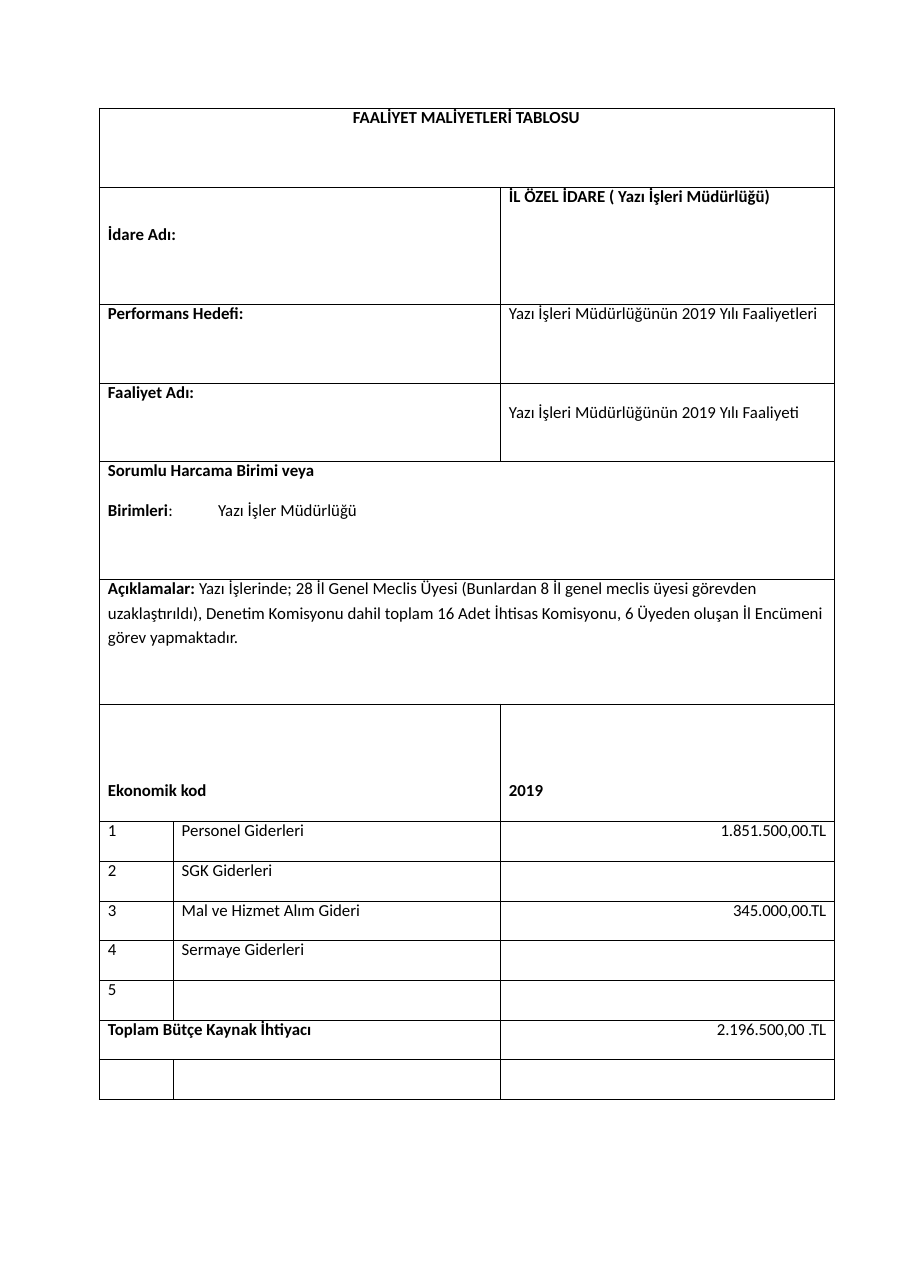
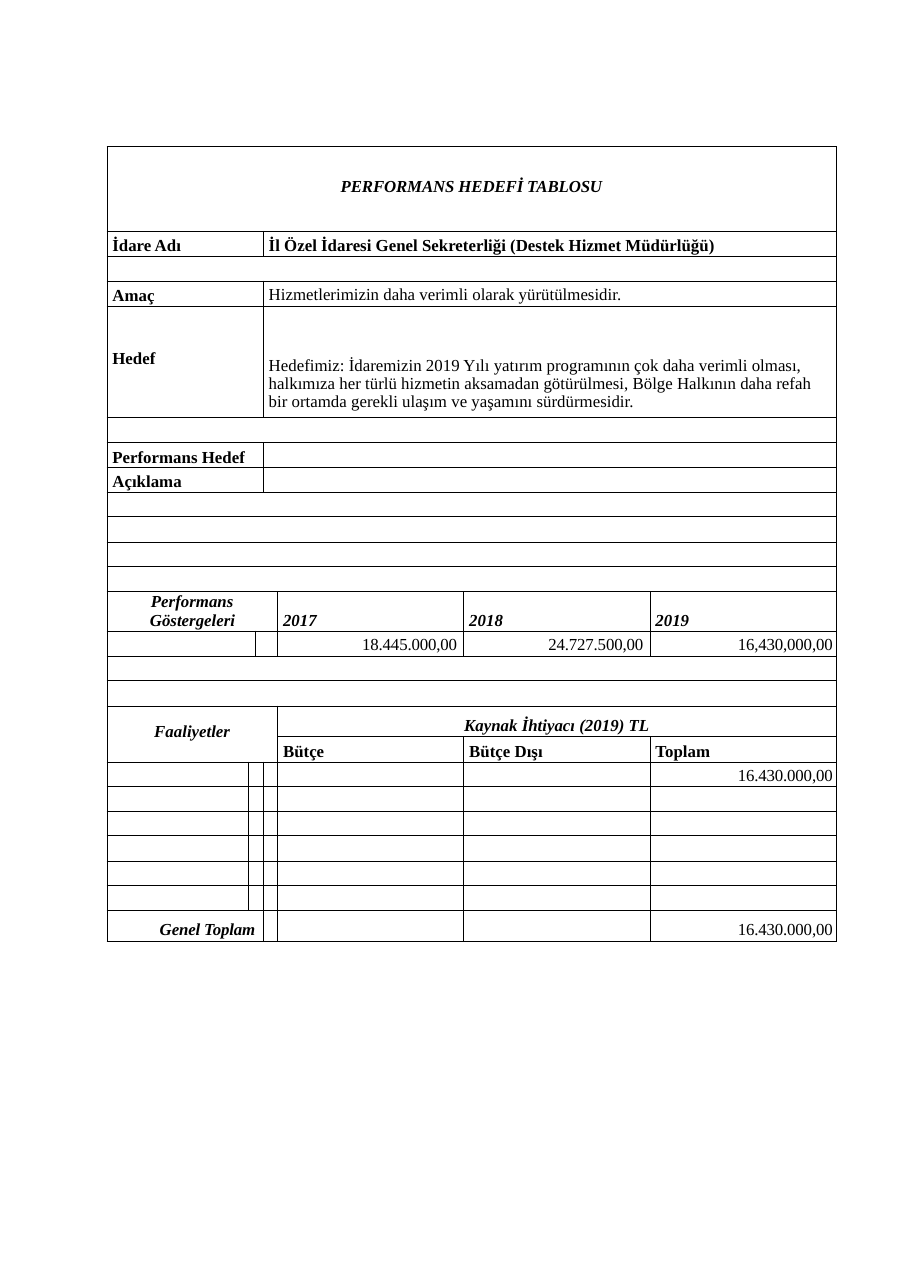
from lxml import etree
from pptx import Presentation
from pptx.dml.color import RGBColor
from pptx.enum.text import PP_ALIGN
from pptx.oxml.ns import qn
from pptx.util import Inches, Pt

LEFT, CENTER, RIGHT = PP_ALIGN.LEFT, PP_ALIGN.CENTER, PP_ALIGN.RIGHT
COLORS = {"ink": "000000"}
TEXT_SIZE = 11
EMPTY_SIZE = 8
BORDER = Pt(0.5)
TIGHT = "-10"


def para(*runs, pitch=None, before=0, tab=None):
    return {"runs": runs, "pitch": pitch, "before": before, "tab": tab}


def entry(row, col, *paras, left=0.0, top=0.0, right=0.0, align=LEFT, first=0.0):
    return {"row": row, "col": col, "paras": paras, "left": left, "top": top,
            "right": right, "align": align, "first": first}


def cost_cell(row, col, text, style="", top=0.0, pitch=12.9):
    return entry(row, col, para((text, style), pitch=pitch), left=0.08, top=top)


def target_cell(row, col, text, style="b", top=0.04, left=0.05):
    return entry(row, col, para((text, style), pitch=12.8), left=left, top=top)


EXPENSES = [
    ("1", "Personel Giderleri", "1.851.500,00.TL"),
    ("2", "SGK Giderleri", ""),
    ("3", "Mal ve Hizmet Alım Gideri", "345.000,00.TL"),
    ("4", "Sermaye Giderleri", ""),
    ("5", "", ""),
]
FIRST_EXPENSE = 7

cost_entries = [
    entry(0, 0, para(("FAALİYET MALİYETLERİ TABLOSU", "b"), pitch=13), align=CENTER),
    cost_cell(1, 0, "İdare Adı:", "b", top=0.34, pitch=None),
    cost_cell(1, 2, "İL ÖZEL İDARE ( Yazı İşleri Müdürlüğü)", "b"),
    cost_cell(2, 0, "Performans Hedefi:", "b"),
    cost_cell(2, 2, "Yazı İşleri Müdürlüğünün 2019 Yılı Faaliyetleri"),
    cost_cell(3, 0, "Faaliyet Adı:", "b"),
    cost_cell(3, 2, "Yazı İşleri Müdürlüğünün 2019 Yılı Faaliyeti", top=0.17, pitch=None),
    entry(4, 0,
          para(("Sorumlu Harcama Birimi veya", "b"), pitch=12.9),
          para(("Birimleri", "b"), (":\tYazı İşler Müdürlüğü", ""), before=12.2, tab=4.05),
          left=0.08),
    entry(5, 0,
          para(("Açıklamalar: ", "b"),
               ("Yazı İşlerinde; 28 İl Genel Meclis Üyesi "
                "(Bunlardan 8 İl genel meclis üyesi görevden", ""), pitch=13),
          para(("uzaklaştırıldı), Denetim Komisyonu dahil toplam 16 Adet İhtisas Komisyonu, "
                "6 Üyeden oluşan İl Encümeni görev yapmaktadır.", ""), pitch=15.5, before=0.8),
          left=0.08),
    cost_cell(6, 0, "Ekonomik kod", "b", top=0.69, pitch=None),
    cost_cell(6, 2, "2019", "b", top=0.69, pitch=None),
    cost_cell(12, 0, "Toplam Bütçe Kaynak İhtiyacı", "b"),
]
amounts = [(12, "2.196.500,00 .TL")]
for row, (code, label, amount) in enumerate(EXPENSES, FIRST_EXPENSE):
    cost_entries.append(cost_cell(row, 0, code))
    if label:
        cost_entries.append(cost_cell(row, 1, label))
    if amount:
        amounts.append((row, amount))
cost_entries += [entry(row, 2, para((amount, "t"), pitch=12.9), right=0.07, align=RIGHT)
                 for row, amount in amounts]

COST_TABLE = {
    "font": "Calibri",
    "at": (0.9, 0.98),
    "cols": [0.67, 2.97, 3.03],
    "rows": [0.72, 1.06, 0.72, 0.71, 1.07, 1.13, 1.07] + [0.36] * 7,
    "merges": [(r, 0, r, 2) for r in (0, 4, 5)] + [(r, 0, r, 1) for r in (1, 2, 3, 6, 12)],
    "entries": cost_entries,
}

YEARS = [("2017", "18.445.000,00"), ("2018", "24.727.500,00"), ("2019", "16,430,000,00")]
SOURCES = ["Bütçe", "Bütçe Dışı", "Toplam"]
FIRST_VALUE_COL = 4
TOTAL_COL = 6

target_entries = [
    entry(0, 0, para(("PERFORMANS HEDEFİ TABLOSU", "bit")), top=0.28, align=CENTER),
    target_cell(1, 0, "İdare Adı"),
    target_cell(1, 3, "İl Özel İdaresi Genel Sekreterliği (Destek Hizmet Müdürlüğü)"),
    target_cell(3, 0, "Amaç"),
    target_cell(3, 3, "Hizmetlerimizin daha verimli olarak yürütülmesidir.", "", top=0.03),
    entry(4, 0, para(("Hedef", "b")), left=0.05, top=0.39),
    entry(4, 3,
          para(("Hedefimiz: İdaremizin 2019 Yılı yatırım programının çok daha verimli olması, "
                "halkımıza her türlü hizmetin aksamadan götürülmesi, Bölge Halkının daha refah "
                "bir ortamda gerekli ulaşım ve yaşamını sürdürmesidir.", ""), pitch=0.96),
          left=0.05, top=0.46, right=0.15),
    target_cell(6, 0, "Performans Hedef"),
    target_cell(7, 0, "Açıklama"),
    entry(12, 0, para(("Performans Göstergeleri", "bi"), pitch=12.7), left=0.39, first=0.01),
    entry(16, 0, para(("Faaliyetler", "bi")), left=0.43, top=0.15),
    entry(16, 4, para(("Kaynak İhtiyacı (2019) TL", "bi"), pitch=12.7), top=0.09, align=CENTER),
    target_cell(24, 0, "Genel Toplam", "bit", top=0.08, left=0.48),
]
for col, ((year, amount), source) in enumerate(zip(YEARS, SOURCES), FIRST_VALUE_COL):
    target_entries += [
        target_cell(12, col, year, "bi", top=0.17),
        entry(13, col, para((amount, "t"), pitch=13), top=0.03,
              right=0.03 if col == TOTAL_COL else 0.06, align=RIGHT),
        target_cell(17, col, source),
    ]
for row, top in ((18, 0.03), (24, 0.08)):
    target_entries.append(entry(row, TOTAL_COL, para(("16.430.000,00", "t"), pitch=13),
                                top=top, right=0.03, align=RIGHT))

TALL_ROWS = {0: 0.77, 4: 1.01, 12: 0.36, 16: 0.28, 24: 0.28}
FULL_ROWS = (0, 2, 5, 8, 9, 10, 11, 14, 15)
TARGET_TABLE = {
    "font": "Times New Roman",
    "at": (0.97, 1.33),
    "cols": [1.28, 0.07, 0.07, 0.13] + [1.69] * 3,
    "rows": [TALL_ROWS.get(r, 0.23 if r % 2 else 0.22) for r in range(25)],
    "merges": [(r, 0, r, 6) for r in FULL_ROWS]
    + [(r, 0, r, 2) for r in (1, 3, 4, 6, 7, 24)]
    + [(r, 3, r, 6) for r in (1, 3, 4, 6, 7)]
    + [(12, 0, 12, 3), (13, 0, 13, 1), (13, 2, 13, 3), (16, 0, 17, 3), (16, 4, 16, 6)]
    + [(r, 1, r, 2) for r in range(18, 24)],
    "entries": target_entries,
}


def style_cell(cell):
    cell.margin_left = cell.margin_right = cell.margin_top = cell.margin_bottom = 0
    cell.fill.background()
    props = cell._tc.get_or_add_tcPr()
    for index, side in enumerate(("a:lnL", "a:lnR", "a:lnT", "a:lnB")):
        line = etree.Element(qn(side), w=str(int(BORDER)))
        fill = etree.SubElement(line, qn("a:solidFill"))
        etree.SubElement(fill, qn("a:srgbClr"), val=COLORS["ink"])
        props.insert(index, line)
    etree.SubElement(cell.text_frame.paragraphs[0]._p, qn("a:endParaRPr"),
                     sz=str(EMPTY_SIZE * 100))


def write_paragraph(paragraph, part, item, font):
    for end in paragraph._p.findall(qn("a:endParaRPr")):
        paragraph._p.remove(end)
    paragraph.alignment = item["align"]
    props = paragraph._p.get_or_add_pPr()
    props.set("marL", str(int(Inches(item["left"]))))
    props.set("indent", str(int(Inches(item["first"]))))
    pitch = part["pitch"]
    if pitch:
        paragraph.line_spacing = pitch if pitch < 2 else Pt(pitch)
    if part["before"]:
        paragraph.space_before = Pt(part["before"])
    if part["tab"]:
        stops = etree.SubElement(props, qn("a:tabLst"))
        etree.SubElement(stops, qn("a:tab"), pos=str(int(Inches(part["tab"]))), algn="l")
    for text, style in part["runs"]:
        run = paragraph.add_run()
        run.text = text
        run.font.name = font
        run.font.size = Pt(TEXT_SIZE)
        run.font.bold = "b" in style
        run.font.italic = "i" in style
        run.font.color.rgb = RGBColor.from_string(COLORS["ink"])
        if "t" in style:
            run._r.get_or_add_rPr().set("spc", TIGHT)


def fill_entry(table, item, font):
    cell = table.cell(item["row"], item["col"])
    cell.margin_top = Inches(item["top"])
    cell.margin_right = Inches(item["right"])
    frame = cell.text_frame
    for index, part in enumerate(item["paras"]):
        paragraph = frame.add_paragraph() if index else frame.paragraphs[0]
        write_paragraph(paragraph, part, item, font)


def add_form(deck, form):
    slide = deck.slides.add_slide(deck.slide_layouts[6])
    cols, rows = form["cols"], form["rows"]
    left, top = form["at"]
    table = slide.shapes.add_table(len(rows), len(cols), Inches(left), Inches(top),
                                   Inches(sum(cols)), Inches(sum(rows))).table
    table.first_row = table.horz_banding = False
    for column, width in zip(table.columns, cols):
        column.width = Inches(width)
    for row, height in zip(table.rows, rows):
        row.height = Inches(height)
        for cell in row.cells:
            style_cell(cell)
    for r1, c1, r2, c2 in form["merges"]:
        table.cell(r1, c1).merge(table.cell(r2, c2))
    for item in form["entries"]:
        fill_entry(table, item, form["font"])


def main():
    deck = Presentation()
    deck.slide_width = Inches(8.26)
    deck.slide_height = Inches(11.69)
    for form in (COST_TABLE, TARGET_TABLE):
        add_form(deck, form)
    deck.save("out.pptx")


if __name__ == "__main__":
    main()
